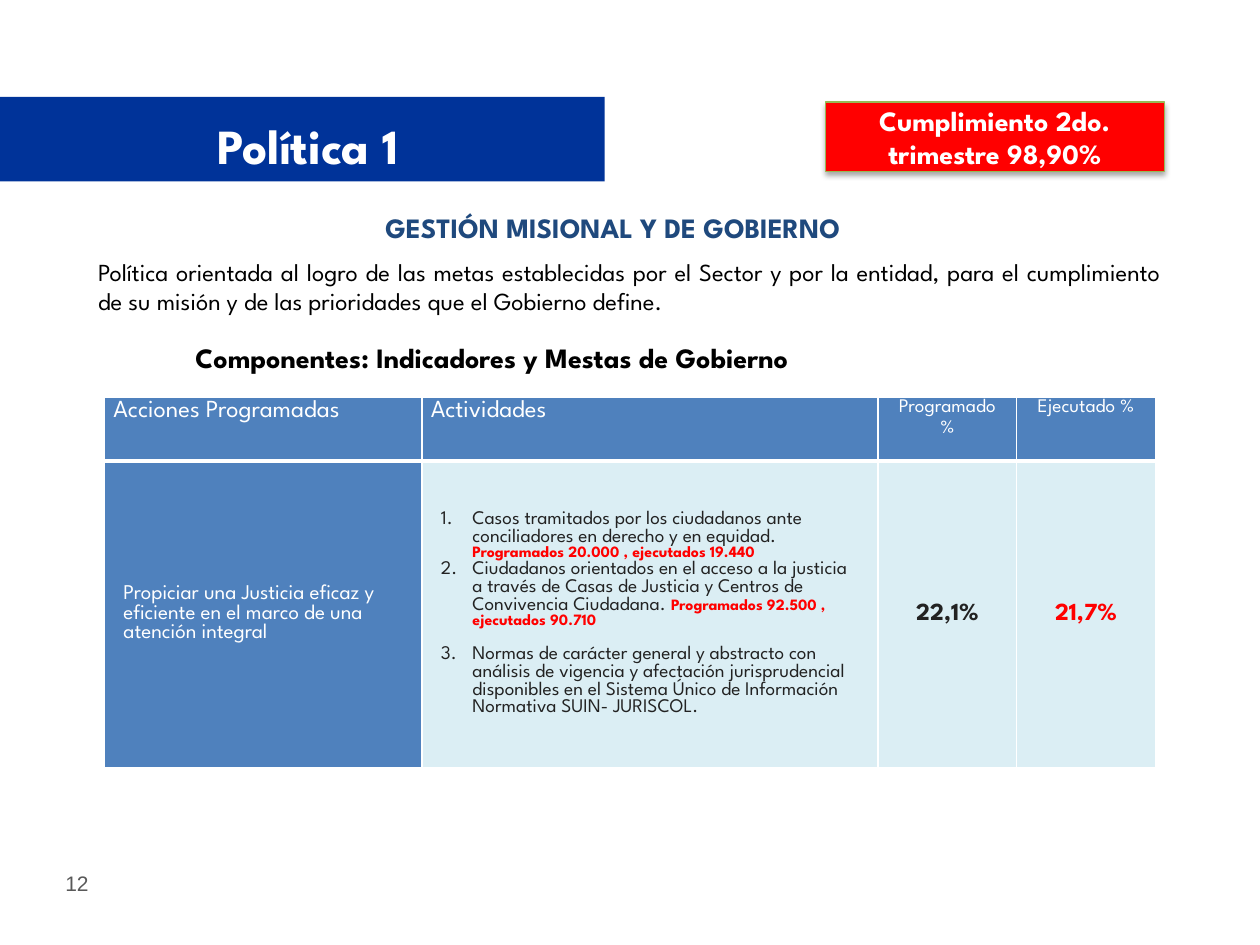
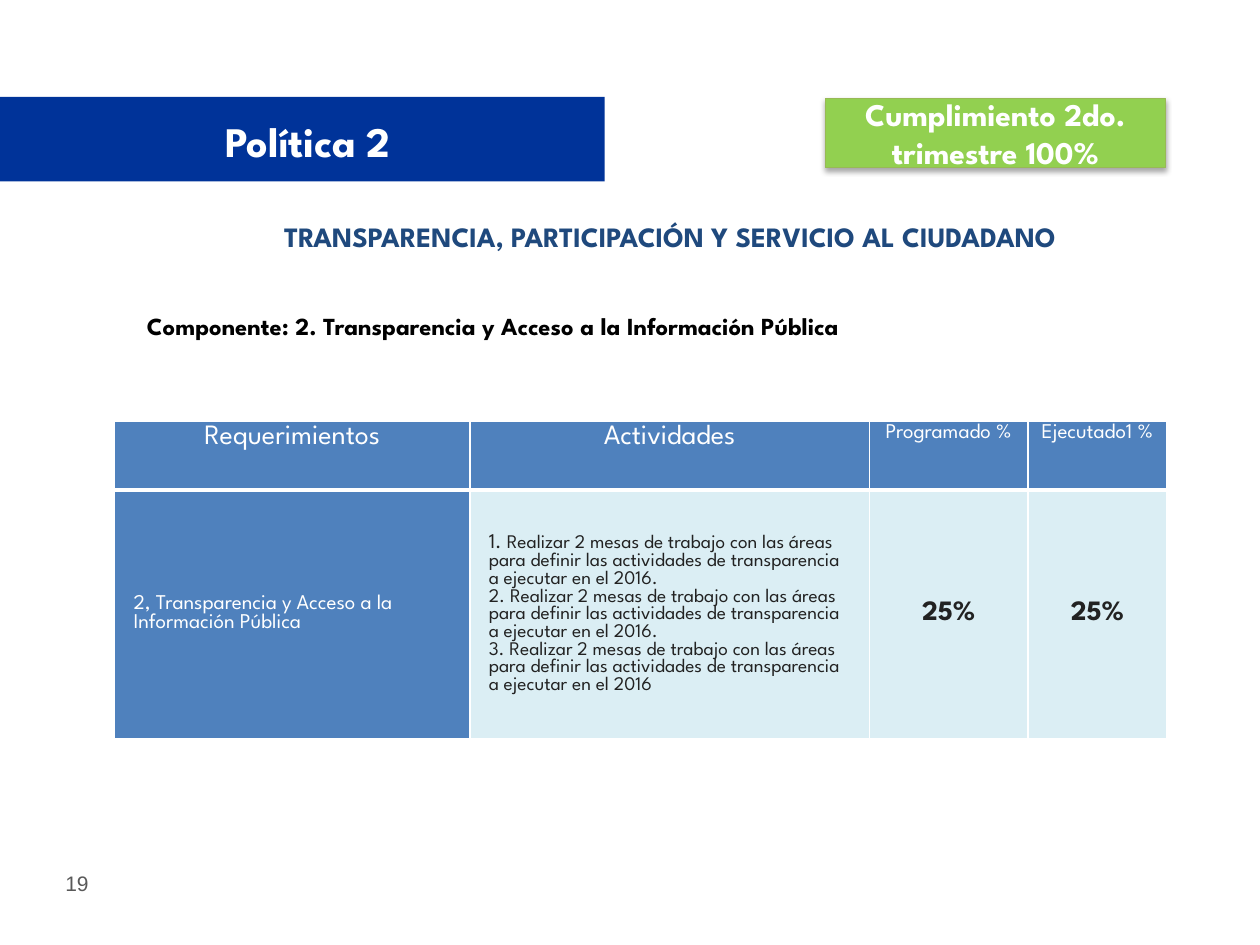
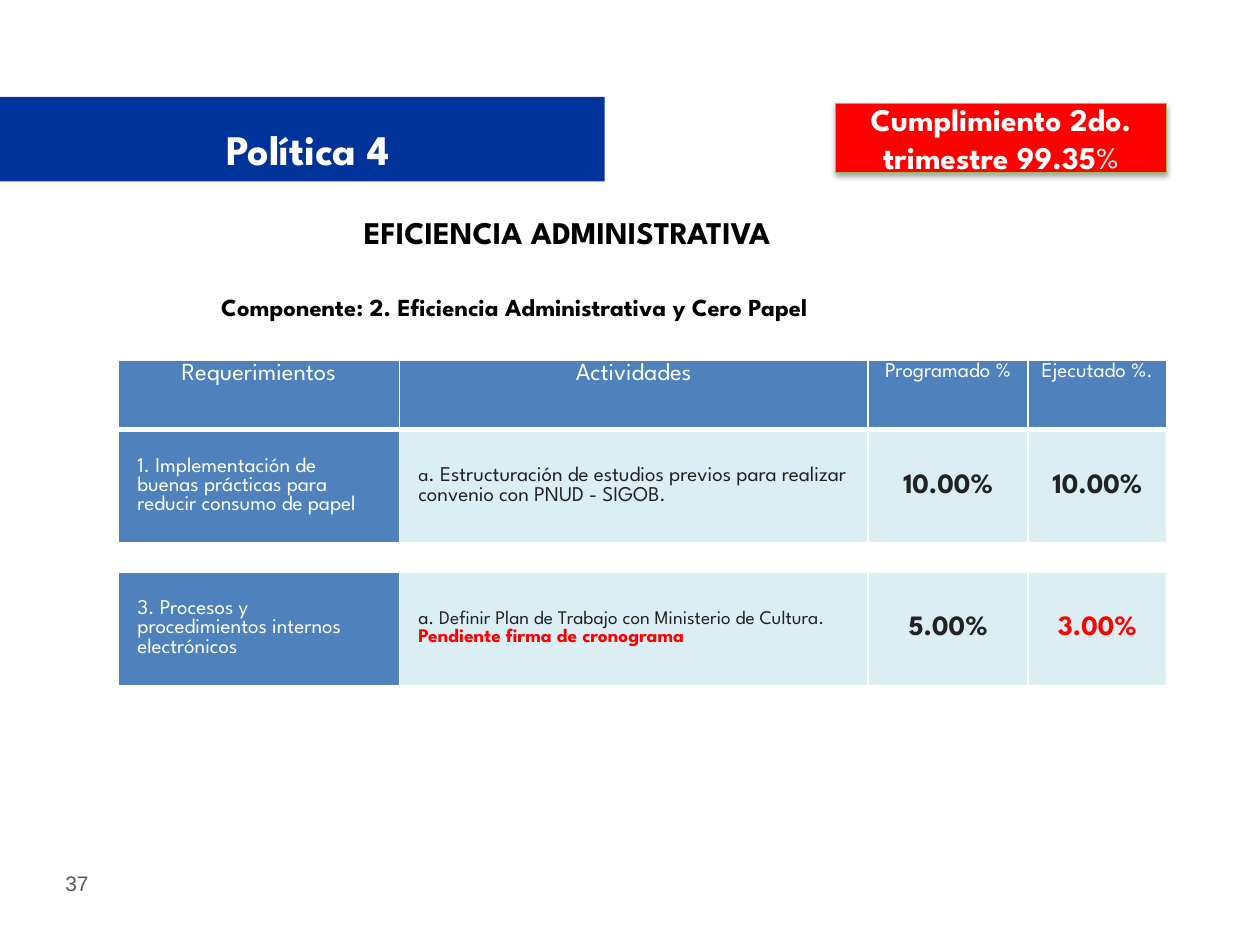
from dataclasses import dataclass

from lxml.etree import SubElement
from pptx import Presentation
from pptx.dml.color import RGBColor
from pptx.enum.shapes import MSO_SHAPE
from pptx.enum.text import MSO_ANCHOR, PP_ALIGN
from pptx.oxml.ns import qn
from pptx.util import Inches, Pt

FONT = "League Spartan"
BAND_BLUE = "003399"
TITLE_BLUE = "1F497D"
TABLE_BLUE = "4F81BD"
PALE_BLUE = "DBEEF4"
WHITE = "FFFFFF"
BLACK = "000000"
GRAY = "595959"
INK = "222222"
RED = "FF0000"
GREEN = "92D050"
BADGE_LINE = "98B955"
HEADER_SPACING = 1.15


@dataclass(frozen=True)
class Span:
    """A piece of text with its own format."""

    text: str
    size: float
    color: str = INK
    bold: bool = False


@dataclass(frozen=True)
class Area:
    """A rectangle in inches."""

    left: float
    top: float
    width: float
    height: float


@dataclass(frozen=True)
class Label:
    """A text box and its format."""

    area: Area
    text: str
    size: float
    color: str = BLACK
    bold: bool = True
    align: PP_ALIGN = PP_ALIGN.CENTER
    wrap: bool = True


@dataclass(frozen=True)
class Badge:
    """A compliance box."""

    area: Area
    spans: tuple[Span, ...]
    fill: str


@dataclass(frozen=True)
class Row:
    """A requirement with its activities and percentages."""

    requirement: str
    activities: tuple[tuple[Span, ...], ...]
    planned: str
    done: str
    height: float
    done_color: str = INK
    numbered: bool = False


@dataclass(frozen=True)
class Grid:
    """A table of requirements."""

    left: float
    top: float
    widths: tuple[float, ...]
    rows: tuple[Row, ...]
    value_size: float = 16
    headers: tuple[Span, ...] = ()
    header_height: float = 0.55
    header_aligns: tuple[PP_ALIGN, ...] = (PP_ALIGN.CENTER,) * 4


@dataclass(frozen=True)
class Policy:
    """The content of one slide."""

    number: str
    title: Label
    badge: Badge
    labels: tuple[Label, ...]
    grids: tuple[Grid, ...]


def rgb(color: str) -> RGBColor:
    """Turn a hex string into a colour."""
    return RGBColor.from_string(color)


def add_numbering(para) -> None:
    """Number a paragraph with a hanging indent."""
    properties = para._p.get_or_add_pPr()
    properties.set("marL", str(Inches(0.25)))
    properties.set("indent", str(-Inches(0.25)))
    SubElement(properties, qn("a:buAutoNum"), type="arabicPeriod")


def write(frame, lines, *, align=PP_ALIGN.LEFT, spacing=1.0, font=FONT,
          numbered=False, last_gap=0) -> None:
    """Fill a text frame with lines made of spans."""
    frame.word_wrap = True
    for index, spans in enumerate(lines):
        para = frame.paragraphs[0] if index == 0 else frame.add_paragraph()
        if numbered:
            add_numbering(para)
        para.alignment = align
        para.line_spacing = spacing
        if last_gap and index == len(lines) - 1:
            para.space_before = Pt(last_gap)
        for span in spans:
            for part, text in enumerate(span.text.split("\n")):
                if part:
                    para.add_line_break()
                run = para.add_run()
                run.text = text
                run.font.name = font
                run.font.size = Pt(span.size)
                run.font.bold = span.bold
                run.font.color.rgb = rgb(span.color)


def place(area: Area) -> tuple:
    """Give an area as lengths."""
    return tuple(Inches(v) for v in (area.left, area.top, area.width, area.height))


def add_label(page, label: Label, font: str = FONT) -> None:
    """Draw a text box."""
    box = page.shapes.add_textbox(*place(label.area))
    span = Span(label.text, label.size, label.color, label.bold)
    write(box.text_frame, [(span,)], align=label.align, font=font)
    box.text_frame.word_wrap = label.wrap


def add_rectangle(page, area: Area, fill: str):
    """Draw a plain filled rectangle."""
    box = page.shapes.add_shape(MSO_SHAPE.RECTANGLE, *place(area))
    box.shadow.inherit = False
    box.fill.solid()
    box.fill.fore_color.rgb = rgb(fill)
    box.line.fill.background()
    return box


def add_badge(page, badge: Badge) -> None:
    """Draw a compliance box with a soft shadow."""
    box = add_rectangle(page, badge.area, badge.fill)
    box.line.color.rgb = rgb(BADGE_LINE)
    box.line.width = Pt(0.75)
    effects = box._element.spPr.find(qn("a:effectLst"))
    shadow = SubElement(effects, qn("a:outerShdw"), blurRad=str(Pt(3.1)),
                        dist=str(Pt(1.8)), dir="5400000", rotWithShape="0")
    shade = SubElement(shadow, qn("a:srgbClr"), val=BLACK)
    SubElement(shade, qn("a:alpha"), val="35000")
    box.text_frame.vertical_anchor = MSO_ANCHOR.MIDDLE
    write(box.text_frame, [badge.spans], align=PP_ALIGN.CENTER)


def style_cell(cell, fill: str, across: float, down: float, bottom: float = 1) -> None:
    """Set the margins, white borders and fill of a cell."""
    cell.margin_left = cell.margin_right = Inches(across)
    cell.margin_top = cell.margin_bottom = Inches(down)
    properties = cell._tc.get_or_add_tcPr()
    for side, width in (("L", 1), ("R", 1), ("T", 1), ("B", bottom)):
        line = SubElement(properties, qn(f"a:ln{side}"), w=str(Pt(width)))
        solid = SubElement(line, qn("a:solidFill"))
        SubElement(solid, qn("a:srgbClr"), val=WHITE)
    cell.fill.solid()
    cell.fill.fore_color.rgb = rgb(fill)


def fill_row(cells, row: Row, value_size: float) -> None:
    """Fill the cells of one requirement."""
    values = ((row.planned, INK), (row.done, row.done_color))
    contents = [((Span(row.requirement, 12, WHITE),),), row.activities]
    contents += [((Span(text, value_size, color, True),),) for text, color in values]
    for column, (cell, lines) in enumerate(zip(cells, contents)):
        is_value = column > 1
        margin = 0 if is_value else 0.15
        style_cell(cell, PALE_BLUE if column else TABLE_BLUE, margin, margin)
        cell.vertical_anchor = MSO_ANCHOR.MIDDLE
        numbered = row.numbered and column == 1
        write(cell.text_frame, lines, numbered=numbered, last_gap=10 if numbered else 0,
              align=PP_ALIGN.CENTER if is_value else PP_ALIGN.LEFT)


def add_grid(page, grid: Grid) -> None:
    """Draw a table of requirements."""
    heights = [row.height for row in grid.rows]
    if grid.headers:
        heights.insert(0, grid.header_height)
    area = Area(grid.left, grid.top, sum(grid.widths), sum(heights))
    table = page.shapes.add_table(len(heights), len(grid.widths), *place(area)).table
    table.first_row = table.horz_banding = False
    for column, width in zip(table.columns, grid.widths):
        column.width = Inches(width)
    for table_row, height in zip(table.rows, heights):
        table_row.height = Inches(height)
    table_rows = list(table.rows)
    if grid.headers:
        header_cells = table_rows.pop(0).cells
        for cell, span, align in zip(header_cells, grid.headers, grid.header_aligns):
            style_cell(cell, TABLE_BLUE, 0.07, 0, bottom=3)
            write(cell.text_frame, [(span,)], align=align, spacing=HEADER_SPACING)
    for table_row, row in zip(table_rows, grid.rows):
        fill_row(table_row.cells, row, grid.value_size)


def headers(first: str, planned: str, done: str, size: float, small: float) -> tuple[Span, ...]:
    """Make the heading spans of a table."""
    texts = ((first, size), ("Actividades", size), (planned, small), (done, small))
    return tuple(Span(text, points, WHITE) for text, points in texts)


def title(text: str, size: float, top: float = 0.87) -> Label:
    """Make the title that lies on the blue band."""
    return Label(Area(0.34, top, 4.21, 0.48), text, size, WHITE)


def add_policy(deck, policy: Policy) -> None:
    """Add the slide of one policy."""
    page = deck.slides.add_slide(deck.slide_layouts[6])
    number = Label(Area(0.42, 6.86, 0.75, 0.3), policy.number, 12, GRAY, False, PP_ALIGN.LEFT)
    add_label(page, number, font="Arial")
    add_rectangle(page, Area(0, 0.77, 4.8, 0.67), BAND_BLUE)
    add_label(page, policy.title)
    for label in policy.labels:
        add_label(page, label)
    for grid in policy.grids:
        add_grid(page, grid)
    add_badge(page, policy.badge)


MEETINGS = "Realizar 2 mesas de trabajo con las áreas para definir las actividades de transparencia a ejecutar en el 2016"
PAPER_WIDTHS = (2.23, 3.72, 1.27, 1.1)

POLICIES = (
    Policy(
        "12", title("Política 1", 28),
        Badge(Area(6.55, 0.81, 2.69, 0.55),
              (Span("Cumplimiento 2do. trimestre 98,90%", 16, WHITE, True),), RED),
        (
            Label(Area(0.99, 2.65, 5.83, 0.37), "Componentes: Indicadores y Mestas de Gobierno", 16),
            Label(Area(2.38, 1.62, 4.97, 0.37), "GESTIÓN MISIONAL Y DE GOBIERNO", 16, TITLE_BLUE),
            Label(Area(0.68, 1.99, 8.64, 0.57),
                  "Política orientada al logro de las metas establecidas por el Sector y por la entidad, "
                  "para el cumplimiento de su misión y de las prioridades que el Gobierno define.",
                  14, bold=False, align=PP_ALIGN.JUSTIFY),
        ),
        (Grid(
            0.83, 3.15, (2.52, 3.62, 1.1, 1.1),
            (Row(
                "Propiciar una Justicia eficaz y eficiente en el marco de una atención integral",
                (
                    (Span("Casos tramitados por los ciudadanos ante conciliadores en derecho y en equidad. ", 11),
                     Span("Programados 20.000 , ejecutados 19.440", 9, RED, True)),
                    (Span("Ciudadanos orientados en el acceso a la justicia a través de Casas de Justicia "
                          "y Centros de Convivencia Ciudadana. ", 11),
                     Span("Programados 92.500 , ejecutados 90.710", 9, RED, True)),
                    (Span("Normas de carácter general y abstracto con análisis de vigencia y afectación "
                          "jurisprudencial disponibles en el Sistema Único de Información Normativa "
                          "SUIN- JURISCOL.", 11),),
                ),
                "22,1%", "21,7%", 2.43, RED, numbered=True),),
            14, headers("Acciones Programadas", "Programado\n%", "Ejecutado %", 14, 11), 0.51,
            (PP_ALIGN.LEFT,) * 2 + (PP_ALIGN.CENTER,) * 2),),
    ),
    Policy(
        "19", title("Política 2", 24),
        Badge(Area(6.55, 0.78, 2.7, 0.55),
              (Span("Cumplimiento 2do. trimestre 100%", 18, WHITE, True),), GREEN),
        (
            Label(Area(0.91, 2.42, 6.01, 0.57),
                  "Componente: 2. Transparencia y Acceso a la Información Pública", 14),
            Label(Area(1.64, 1.69, 7.36, 0.37),
                  "TRANSPARENCIA, PARTICIPACIÓN Y SERVICIO AL CIUDADANO", 16, TITLE_BLUE),
        ),
        (Grid(
            0.91, 3.34, (2.82, 3.17, 1.26, 1.1),
            (Row(
                "2, Transparencia y Acceso a la Información Pública",
                (
                    (Span("1. ", 12), Span(f"{MEETINGS}.", 11)),
                    (Span(f"2. {MEETINGS}.", 11),),
                    (Span(f"3. {MEETINGS}", 11),),
                ),
                "25%", "25%", 1.97),),
            headers=headers("Requerimientos", "Programado %", "Ejecutado1 %", 16, 12)),),
    ),
    Policy(
        "37", title("Política 4", 24, 0.93),
        Badge(Area(6.63, 0.82, 2.63, 0.55),
              (Span("Cumplimiento 2do. trimestre 99.35", 18, WHITE, True), Span("%", 18, WHITE)), RED),
        (
            Label(Area(2.79, 1.64, 3.67, 0.4), "EFICIENCIA ADMINISTRATIVA", 18,
                  align=PP_ALIGN.LEFT, wrap=False),
            Label(Area(1.29, 2.27, 5.59, 0.34),
                  "Componente: 2. Eficiencia Administrativa y Cero Papel", 14),
        ),
        (
            Grid(
                0.94, 2.86, PAPER_WIDTHS,
                (Row("1. Implementación de buenas prácticas para reducir consumo de papel",
                     ((Span("a", 11), Span(". Estructuración de estudios previos para realizar "
                                           "convenio con PNUD - SIGOB.", 12)),),
                     "10.00%", "10.00%", 0.9),),
                headers=headers("Requerimientos", "Programado %", "Ejecutado %.", 14, 12)),
            Grid(
                0.94, 4.54, PAPER_WIDTHS,
                (Row("3. Procesos y procedimientos internos electrónicos",
                     ((Span("a. Definir Plan de Trabajo con Ministerio de Cultura. ", 11),
                       Span("Pendiente firma de cronograma", 11, RED, True)),),
                     "5.00%", "3.00%", 0.88, RED),)),
        ),
    ),
)


def main() -> None:
    """Build the deck and save it."""
    deck = Presentation()
    deck.slide_width = Inches(10)
    deck.slide_height = Inches(7.5)
    for policy in POLICIES:
        add_policy(deck, policy)
    deck.save("out.pptx")


if __name__ == "__main__":
    main()
